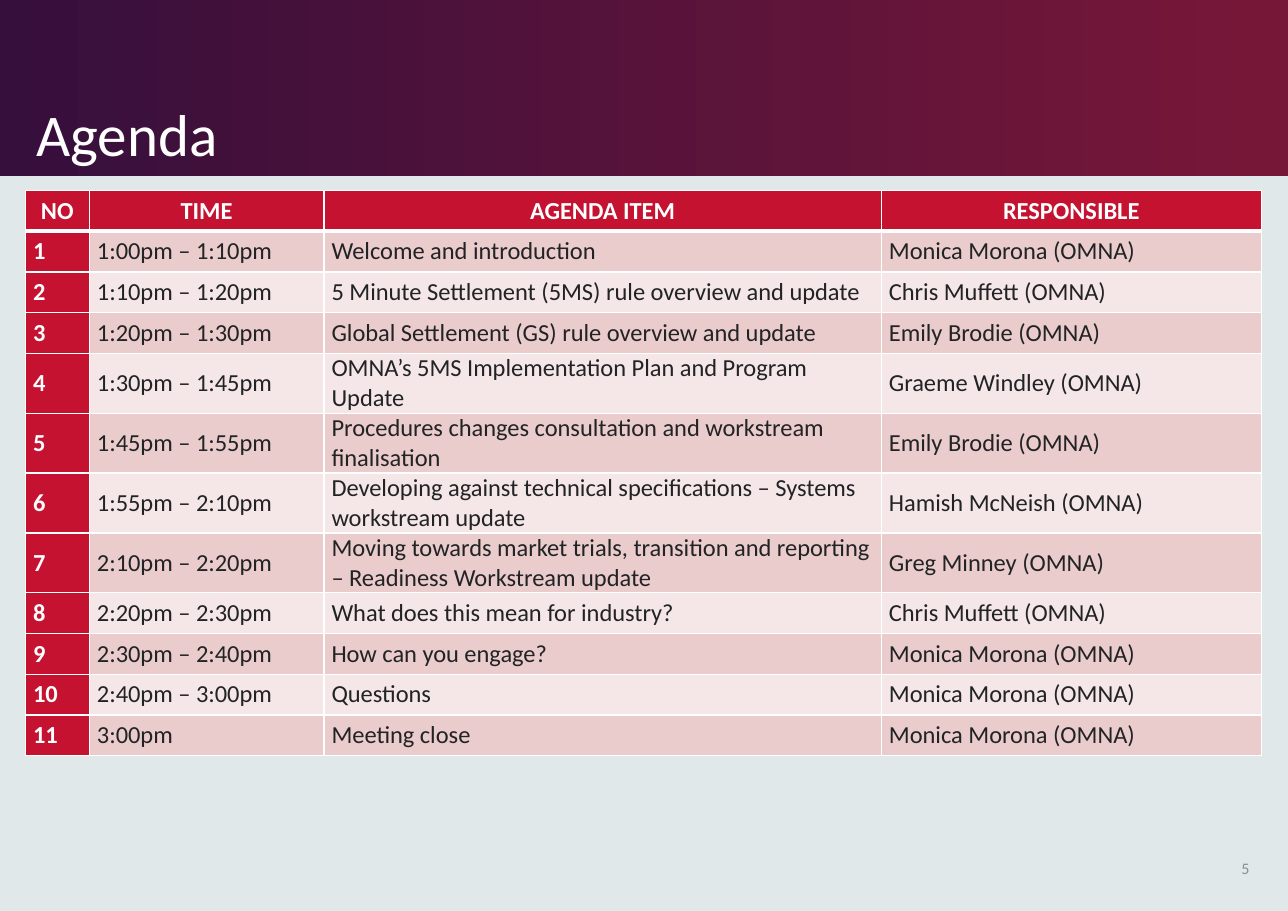
import dataclasses

import pptx
import pptx.dml.color
import pptx.enum.shapes
import pptx.enum.text
import pptx.oxml
import pptx.oxml.ns
import pptx.util

ALIGN = pptx.enum.text.PP_ALIGN
ANCHOR = pptx.enum.text.MSO_ANCHOR


@dataclasses.dataclass(frozen=True)
class Theme:
    font: str = "Calibri"
    background: str = "E0E8EA"
    band_start: str = "360F3C"
    band_end: str = "771738"
    accent: str = "C41230"
    stripes: tuple = ("EACCCD", "F5E7E8")
    white: str = "FFFFFF"
    ink: str = "222324"
    muted: str = "8D8D8E"
    title_size: float = 38.6
    table_size: float = 16
    number_size: float = 10.5
    thin_line: float = 1
    thick_line: float = 3


THEME = Theme()
SLIDE_WIDTH = pptx.util.Inches(11.69)
SLIDE_HEIGHT = pptx.util.Inches(8.27)
GRID = 100
BAND_ROWS = 19.35
TABLE_COLUMNS = (4.96, 18.22, 43.28, 29.51)
TABLE_ROW = 4.47

HEADERS = ("NO", "TIME", "AGENDA ITEM", "RESPONSIBLE")
AGENDA = (
    ("1:00pm – 1:10pm", "Welcome and introduction", "Monica Morona"),
    ("1:10pm – 1:20pm", "5 Minute Settlement (5MS) rule overview and update", "Chris Muffett"),
    ("1:20pm – 1:30pm", "Global Settlement (GS) rule overview and update", "Emily Brodie"),
    ("1:30pm – 1:45pm", "OMNA’s 5MS Implementation Plan and Program Update", "Graeme Windley"),
    ("1:45pm – 1:55pm", "Procedures changes consultation and workstream finalisation", "Emily Brodie"),
    ("1:55pm – 2:10pm", "Developing against technical specifications – Systems workstream update",
     "Hamish McNeish"),
    ("2:10pm – 2:20pm", "Moving towards market trials, transition and reporting – Readiness Workstream update",
     "Greg Minney"),
    ("2:20pm – 2:30pm", "What does this mean for industry?", "Chris Muffett"),
    ("2:30pm – 2:40pm", "How can you engage?", "Monica Morona"),
    ("2:40pm – 3:00pm", "Questions", "Monica Morona"),
    ("3:00pm", "Meeting close", "Monica Morona"),
)


def across(columns):
    return round(SLIDE_WIDTH * columns / GRID)


def down(rows):
    return round(SLIDE_HEIGHT * rows / GRID)


def area(left, top, width, height):
    return across(left), down(top), across(width), down(height)


def color(value):
    return pptx.dml.color.RGBColor.from_string(value)


def write_text(frame, text, size, ink, bold=False, align=ALIGN.LEFT,
               anchor=ANCHOR.MIDDLE, spacing=0, line_spacing=None):
    frame.word_wrap = True
    frame.vertical_anchor = anchor
    paragraph = frame.paragraphs[0]
    paragraph.alignment = align
    paragraph.space_before = paragraph.space_after = pptx.util.Pt(spacing)
    paragraph.line_spacing = line_spacing
    run = paragraph.add_run()
    run.text = text
    run.font.name = THEME.font
    run.font.size = pptx.util.Pt(size)
    run.font.bold = bold
    run.font.color.rgb = color(ink)


def add_band(slide):
    band = slide.shapes.add_shape(
        pptx.enum.shapes.MSO_SHAPE.RECTANGLE, *area(0, 0, GRID, BAND_ROWS))
    band.shadow.inherit = False
    band.line.fill.background()
    band.fill.gradient()
    band.fill.gradient_angle = 0
    start, end = band.fill.gradient_stops
    start.position, end.position = 0, 0.99
    start.color.rgb = color(THEME.band_start)
    end.color.rgb = color(THEME.band_end)
    slide.shapes._spTree.insert(2, band._element)


def add_title(slide, text):
    title = slide.shapes.title
    title.left, title.top, title.width, title.height = area(1.97, 1.93, 73.82, 17.29)
    title.text_frame.auto_size = pptx.enum.text.MSO_AUTO_SIZE.NONE
    write_text(title.text_frame, text, THEME.title_size, THEME.white,
               anchor=ANCHOR.BOTTOM, line_spacing=0.9)


def add_page_number(slide, text):
    box = slide.shapes.add_textbox(*area(93.16, 92.62, 4.7, 5.32))
    write_text(box.text_frame, text, THEME.number_size, THEME.muted, align=ALIGN.RIGHT)


def add_border(cell, side, width):
    border = pptx.oxml.parse_xml(
        f'<a:ln{side} {pptx.oxml.ns.nsdecls("a")} w="{pptx.util.Pt(width)}">'
        f'<a:solidFill><a:srgbClr val="{THEME.white}"/></a:solidFill></a:ln{side}>')
    cell._tc.get_or_add_tcPr().append(border)


def format_cell(cell, text, row, column):
    header = row == 0
    strong = header or column == 0
    thick_side = {0: "B", 1: "T"}.get(row)
    for side in "LRTB":
        add_border(cell, side, THEME.thick_line if side == thick_side else THEME.thin_line)
    cell.fill.solid()
    cell.fill.fore_color.rgb = color(THEME.accent if strong else THEME.stripes[(row - 1) % 2])
    cell.margin_left = cell.margin_right = pptx.util.Inches(0.07)
    cell.margin_top = cell.margin_bottom = 0
    cell.vertical_anchor = ANCHOR.MIDDLE
    write_text(cell.text_frame, text, THEME.table_size, THEME.white if strong else THEME.ink,
               bold=strong, align=ALIGN.CENTER if header else ALIGN.LEFT, anchor=None, spacing=1)


def add_agenda(slide):
    rows = [HEADERS] + [
        (str(number), time, item, f"{person} (OMNA)")
        for number, (time, item, person) in enumerate(AGENDA, 1)]
    table = slide.shapes.add_table(
        len(rows), len(HEADERS),
        *area(1.97, 20.92, sum(TABLE_COLUMNS), TABLE_ROW * len(rows))).table
    for column, width in zip(table.columns, TABLE_COLUMNS):
        column.width = across(width)
    for row, texts in enumerate(rows):
        for column, text in enumerate(texts):
            format_cell(table.cell(row, column), text, row, column)


def main():
    presentation = pptx.Presentation()
    presentation.slide_width = SLIDE_WIDTH
    presentation.slide_height = SLIDE_HEIGHT
    slide = presentation.slides.add_slide(presentation.slide_layouts[5])
    slide.background.fill.solid()
    slide.background.fill.fore_color.rgb = color(THEME.background)
    add_band(slide)
    add_title(slide, "Agenda")
    add_agenda(slide)
    add_page_number(slide, "5")
    presentation.save("out.pptx")


if __name__ == "__main__":
    main()
